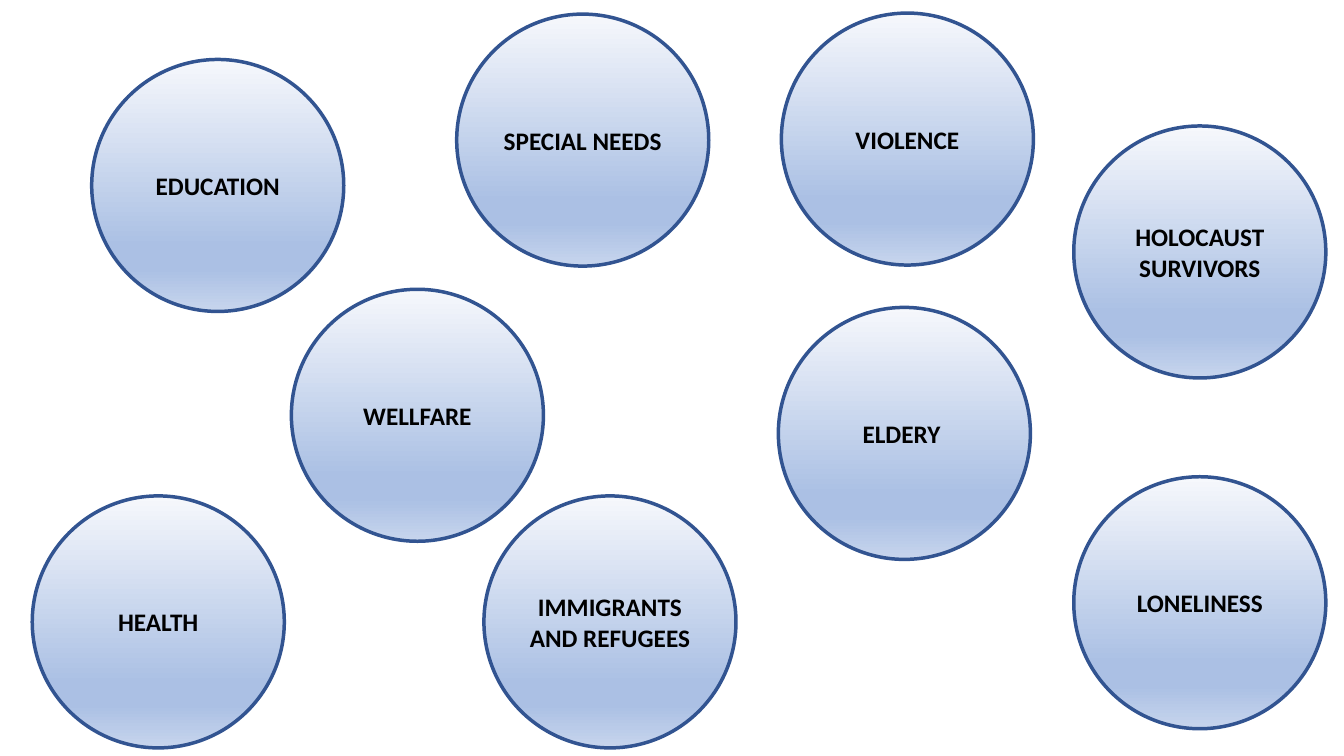
from lxml import etree
from pptx import Presentation
from pptx.dml.color import RGBColor
from pptx.enum.shapes import MSO_SHAPE
from pptx.enum.text import MSO_ANCHOR, PP_ALIGN
from pptx.oxml.ns import qn
from pptx.util import Inches, Pt

BLACK = RGBColor(0x00, 0x00, 0x00)
OUTLINE_BLUE = RGBColor(0x32, 0x54, 0x91)
PALE_BLUE = RGBColor(0xF6, 0xF8, 0xFC)
MID_BLUE = RGBColor(0xAB, 0xC0, 0xE4)
LIGHT_BLUE = RGBColor(0xC7, 0xD5, 0xED)
GRADIENT = [(0, PALE_BLUE), (74, MID_BLUE), (83, MID_BLUE), (100, LIGHT_BLUE)]

DIAMETER = Inches(2.5)
TOPICS = [
    ("EDUCATION", 0.91, 0.59),
    ("SPECIAL NEEDS", 4.53, 0.14),
    ("WELLFARE", 2.89, 2.87),
    ("IMMIGRANTS AND REFUGEES", 4.8, 4.92),
    ("ELDERY ", 7.72, 3.05),
    ("HOLOCAUST SURVIVORS", 10.65, 1.25),
    ("LONELINESS", 10.65, 4.73),
    ("HEALTH", 0.32, 4.92),
    ("VIOLENCE", 7.75, 0.13),
]


def fill_with_gradient(shape):
    """Fill the shape from top to bottom with the stops in GRADIENT."""
    shape.fill.gradient()
    shape.fill.gradient_angle = 270
    stop_list = shape.element.spPr.find(qn("a:gradFill")).find(qn("a:gsLst"))
    for old_stop in list(stop_list):
        stop_list.remove(old_stop)
    for percent, color in GRADIENT:
        stop = etree.SubElement(stop_list, qn("a:gs"), pos=str(percent * 1000))
        etree.SubElement(stop, qn("a:srgbClr"), val=str(color))


presentation = Presentation()
presentation.slide_width = Inches(13.33)
presentation.slide_height = Inches(7.5)
slide = presentation.slides.add_slide(presentation.slide_layouts[6])

for topic, left, top in TOPICS:
    circle = slide.shapes.add_shape(
        MSO_SHAPE.OVAL, Inches(left), Inches(top), DIAMETER, DIAMETER)
    circle.shadow.inherit = False
    fill_with_gradient(circle)
    circle.line.color.rgb = OUTLINE_BLUE
    circle.line.width = Pt(2.5)

    frame = circle.text_frame
    frame.word_wrap = True
    frame.vertical_anchor = MSO_ANCHOR.MIDDLE
    frame.margin_left = frame.margin_right = Inches(0.08)
    paragraph = frame.paragraphs[0]
    paragraph.alignment = PP_ALIGN.CENTER
    run = paragraph.add_run()
    run.text = topic
    run.font.name = "Calibri"
    run.font.size = Pt(18)
    run.font.bold = True
    run.font.color.rgb = BLACK

presentation.save("out.pptx")
